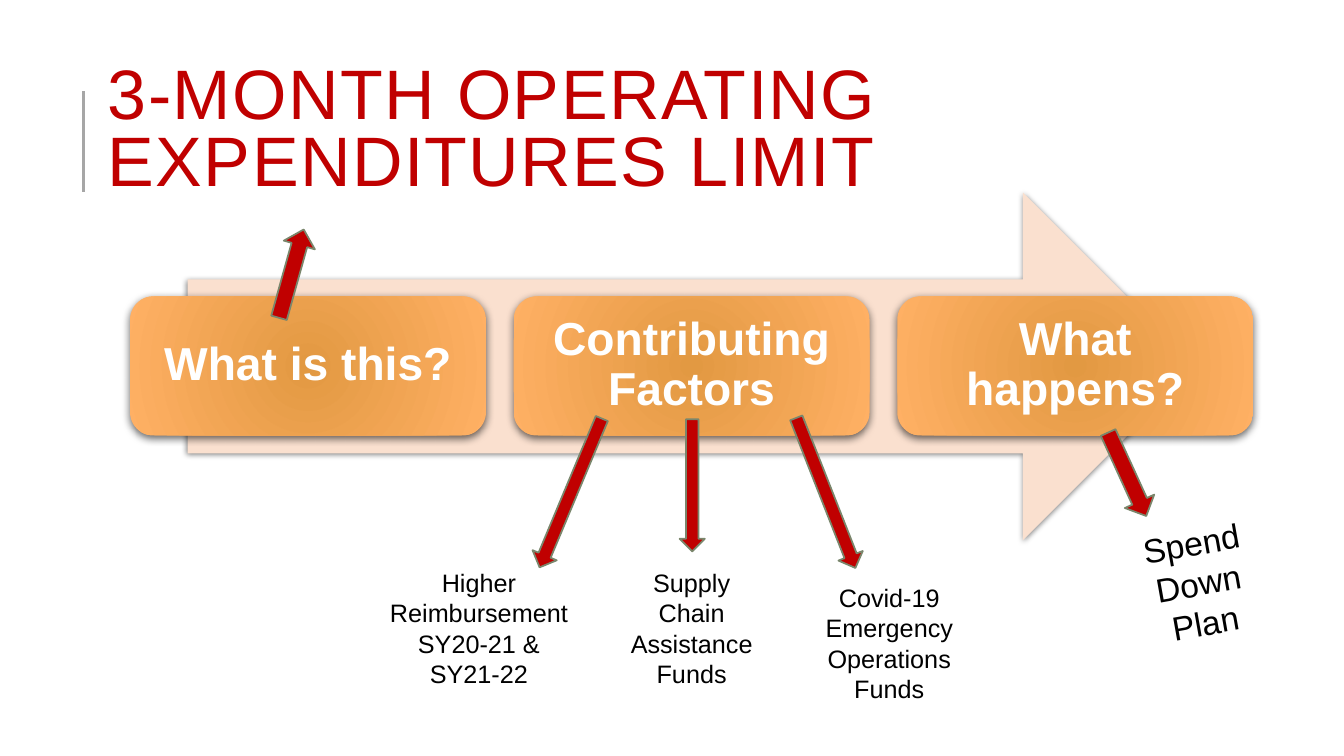
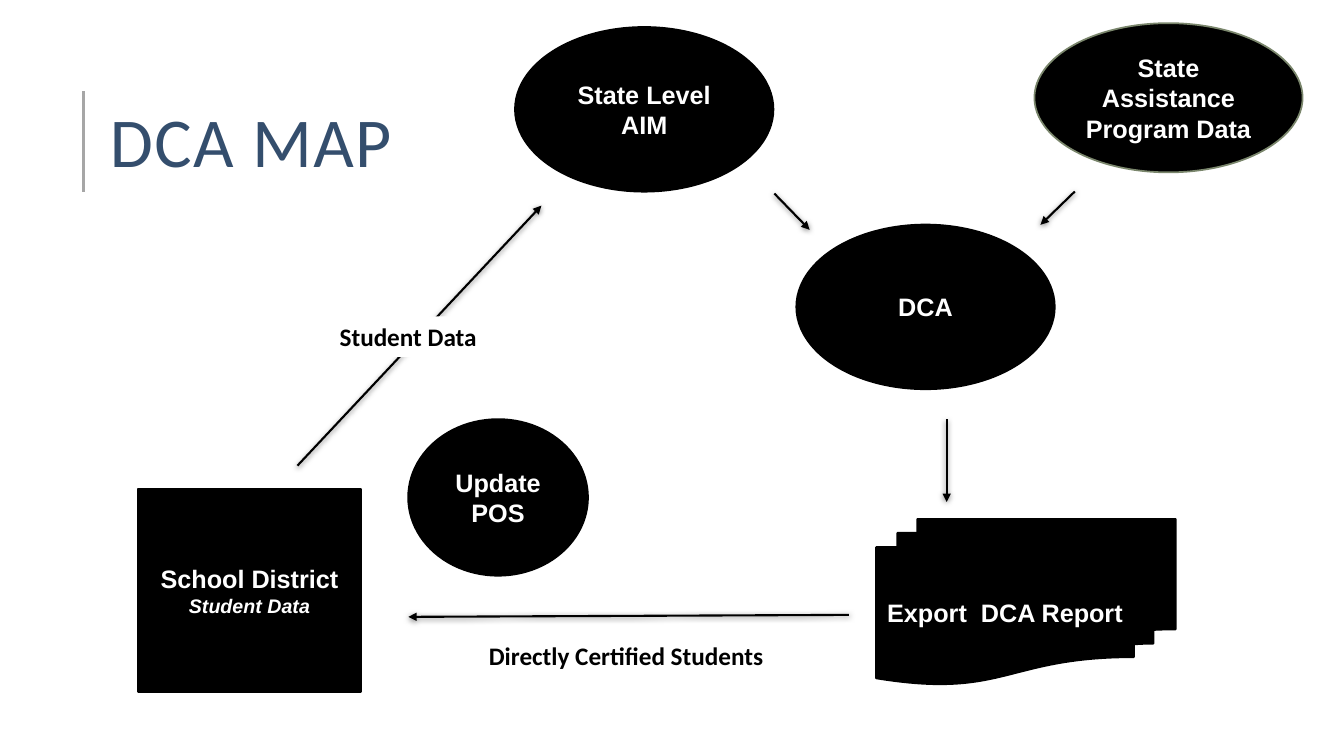
"""Build a two-slide deck on the operating expenditures limit and the DCA map."""
from dataclasses import dataclass

from pptx import Presentation
from pptx.dml.color import RGBColor
from pptx.enum.shapes import MSO_CONNECTOR, MSO_SHAPE
from pptx.enum.text import MSO_ANCHOR, MSO_AUTO_SIZE, PP_ALIGN
from pptx.oxml import parse_xml
from pptx.oxml.ns import nsdecls, qn
from pptx.util import Inches, Pt


@dataclass(frozen=True)
class Theme:
    red: RGBColor = RGBColor(0xC0, 0x00, 0x00)
    navy: RGBColor = RGBColor(0x34, 0x4E, 0x6D)
    black: RGBColor = RGBColor(0x00, 0x00, 0x00)
    white: RGBColor = RGBColor(0xFF, 0xFF, 0xFF)
    gray: RGBColor = RGBColor(0xA6, 0xA6, 0xA6)
    olive: RGBColor = RGBColor(0x7A, 0x86, 0x6C)
    peach: RGBColor = RGBColor(0xFA, 0xE0, 0xCF)
    orange_core: RGBColor = RGBColor(0xE2, 0x99, 0x42)
    orange_edge: RGBColor = RGBColor(0xFF, 0xB0, 0x64)
    font: str = "Arial"
    map_font: str = "Calibri"
    title: Pt = Pt(50)
    step: Pt = Pt(33)
    outcome: Pt = Pt(24)
    body: Pt = Pt(18)
    detail: Pt = Pt(14)


theme = Theme()


def write(frame, lines, size, color, font=theme.font, bold=False, align=PP_ALIGN.CENTER):
    """Fill a text frame with one paragraph per line."""
    frame.word_wrap = True
    frame.text = "\n".join(lines)
    for para in frame.paragraphs:
        para.alignment = align
        para.font.size = size
        para.font.name = font
        para.font.bold = bold
        para.font.color.rgb = color


def add_shadow(shape, opacity, blur, distance):
    """Give a finished shape or line a shadow that falls straight down."""
    shape.element.spPr.append(parse_xml(
        f'<a:effectLst {nsdecls("a")}><a:outerShdw blurRad="{Pt(blur)}" dist="{Pt(distance)}" '
        f'dir="5400000" rotWithShape="0"><a:srgbClr val="{theme.black}">'
        f'<a:alpha val="{opacity * 1000}"/></a:srgbClr></a:outerShdw></a:effectLst>'))


deck = Presentation()
deck.slide_width, deck.slide_height = Inches(13.33), Inches(7.5)
layout = deck.slide_layouts[5]

titles = [
    ("3-MONTH OPERATING EXPENDITURES LIMIT", theme.font, theme.red, (0.97, 0.27, 10.85, 2.09)),
    ("DCA MAP", theme.map_font, theme.navy, (0.99, 0.64, 11.04, 1.64)),
]
for text, font, color, place in titles:
    page = deck.slides.add_slide(layout)
    title = page.shapes.title
    title.left, title.top, title.width, title.height = map(Inches, place)
    frame = title.text_frame
    frame.auto_size = MSO_AUTO_SIZE.NONE
    frame.vertical_anchor = MSO_ANCHOR.MIDDLE
    write(frame, [text], theme.title, color, font, align=PP_ALIGN.LEFT)
    para = frame.paragraphs[0]
    para.line_spacing = 0.8
    para._p.pPr.find(qn("a:defRPr")).set("spc", "100")

limit_page, map_page = deck.slides

rule = limit_page.shapes.add_connector(
    MSO_CONNECTOR.STRAIGHT, Inches(0.83), Inches(1.9), Inches(0.83), Inches(0.9))
rule.line.color.rgb = theme.gray
rule.line.width = Pt(1.75)
rule.element.spPr.append(parse_xml(f'<a:effectLst {nsdecls("a")}/>'))
layout.shapes.element.append(rule.element)

band = limit_page.shapes.add_shape(
    MSO_SHAPE.RIGHT_ARROW, Inches(1.86), Inches(1.91), Inches(10.01), Inches(3.45))
band.fill.solid()
band.fill.fore_color.rgb = theme.peach
band.line.fill.background()
add_shadow(band, 50, 4, 1)

for index, text in enumerate(["What is this?", "Contributing Factors", "What happens?"]):
    step = limit_page.shapes.add_shape(
        MSO_SHAPE.ROUNDED_RECTANGLE, Inches(1.29 + 3.805 * index), Inches(2.94),
        Inches(3.53), Inches(1.38))
    step.fill.gradient()
    for stop, color in zip(step.fill.gradient_stops, (theme.orange_core, theme.orange_edge)):
        stop.color.rgb = color
    gradient = step.element.spPr.find(qn("a:gradFill"))
    gradient.replace(gradient.find(qn("a:lin")), parse_xml(
        f'<a:path {nsdecls("a")} path="circle">'
        '<a:fillToRect l="100000" t="100000" r="100000" b="100000"/></a:path>'))
    step.line.fill.background()
    add_shadow(step, 60, 6, 2)
    frame = step.text_frame
    frame.margin_left = frame.margin_right = Inches(0.14)
    frame.vertical_anchor = MSO_ANCHOR.MIDDLE
    write(frame, [text], theme.step, theme.white, bold=True)
    frame.paragraphs[0].line_spacing = 0.9

notes = [
    (["Higher Reimbursement SY20-21 &", "SY21-22"], 3.68, 5.58, 2.14, 0, theme.body),
    (["Supply Chain Assistance Funds"], 6.05, 5.58, 1.62, 0, theme.body),
    (["Covid-19", "Emergency Operations Funds"], 8.01, 5.73, 1.62, 0, theme.body),
    (["Spend", "Down", "Plan"], 10.81, 5.13, 2.15, 349.8, theme.outcome),
]
for lines, left, top, width, rotation, size in notes:
    box = limit_page.shapes.add_textbox(Inches(left), Inches(top), Inches(width), Inches(1.31))
    box.rotation = rotation
    write(box.text_frame, lines, size, theme.black)

pointers = [
    (2.73, 2.26, 0.32, 0.91, 15.6),
    (5.53, 4.09, 0.26, 1.6, 202.7),
    (6.74, 4.16, 0.25, 1.31, 180),
    (8.06, 4.09, 0.26, 1.6, 158.5),
    (11.02, 4.25, 0.32, 0.91, 155.5),
]
for *place, rotation in pointers:
    pointer = limit_page.shapes.add_shape(MSO_SHAPE.UP_ARROW, *map(Inches, place))
    pointer.rotation = rotation
    pointer.shadow.inherit = False
    pointer.fill.solid()
    pointer.fill.fore_color.rgb = theme.red
    pointer.line.color.rgb = theme.olive
    pointer.line.width = Pt(1.25)

flows = [
    (2.95, 4.62, 5.37, 2.04),
    (7.68, 1.92, 8.03, 2.28),
    (10.66, 1.9, 10.32, 2.23),
    (9.39, 4.16, 9.39, 4.98),
    (8.42, 6.1, 4.05, 6.12),
]
for ends in flows:
    flow = map_page.shapes.add_connector(MSO_CONNECTOR.STRAIGHT, *map(Inches, ends))
    flow.line.color.rgb = theme.black
    flow.line.width = Pt(1.5)
    flow.element.spPr.find(qn("a:ln")).append(
        parse_xml(f'<a:tailEnd {nsdecls("a")} type="triangle"/>'))
    add_shadow(flow, 50, 4, 1)

nodes = [
    (MSO_SHAPE.OVAL, ["State Level AIM"], (5.11, 0.27, 2.56, 1.63), theme.black, 1.5),
    (MSO_SHAPE.OVAL, ["State Assistance Program Data"], (10.26, 0.23, 2.66, 1.48),
     theme.olive, 1.25),
    (MSO_SHAPE.OVAL, ["DCA"], (7.9, 2.23, 2.56, 1.63), theme.black, 1.5),
    (MSO_SHAPE.OVAL, ["Update POS"], (4.05, 4.16, 1.78, 1.55), theme.black, 1.5),
    (MSO_SHAPE.FLOWCHART_MULTIDOCUMENT, ["Export  DCA Report"], (8.69, 5.15, 2.97, 1.64),
     theme.black, 1.5),
    (MSO_SHAPE.ACTION_BUTTON_HOME, ["School District", "Student Data"],
     (1.37, 4.85, 2.21, 2.01), theme.black, 1.5),
]
for kind, lines, place, outline, weight in nodes:
    node = map_page.shapes.add_shape(kind, *map(Inches, place))
    node.shadow.inherit = False
    node.fill.solid()
    node.fill.fore_color.rgb = theme.black
    node.line.color.rgb = outline
    node.line.width = Pt(weight)
    node.text_frame.vertical_anchor = MSO_ANCHOR.MIDDLE
    write(node.text_frame, lines, theme.body, theme.white, bold=True)
    for para in node.text_frame.paragraphs[1:]:
        para.font.size = theme.detail
        para.font.italic = True

labels = [
    ("Student Data", 3.27, 3.14, 1.62),
    ("Directly Certified Students", 4.75, 6.3, 2.97),
]
for text, left, top, width in labels:
    label = map_page.shapes.add_textbox(Inches(left), Inches(top), Inches(width), Inches(0.4))
    label.fill.solid()
    label.fill.fore_color.rgb = theme.white
    write(label.text_frame, [text], theme.body, theme.black, theme.map_font, True, PP_ALIGN.LEFT)

deck.save("out.pptx")
